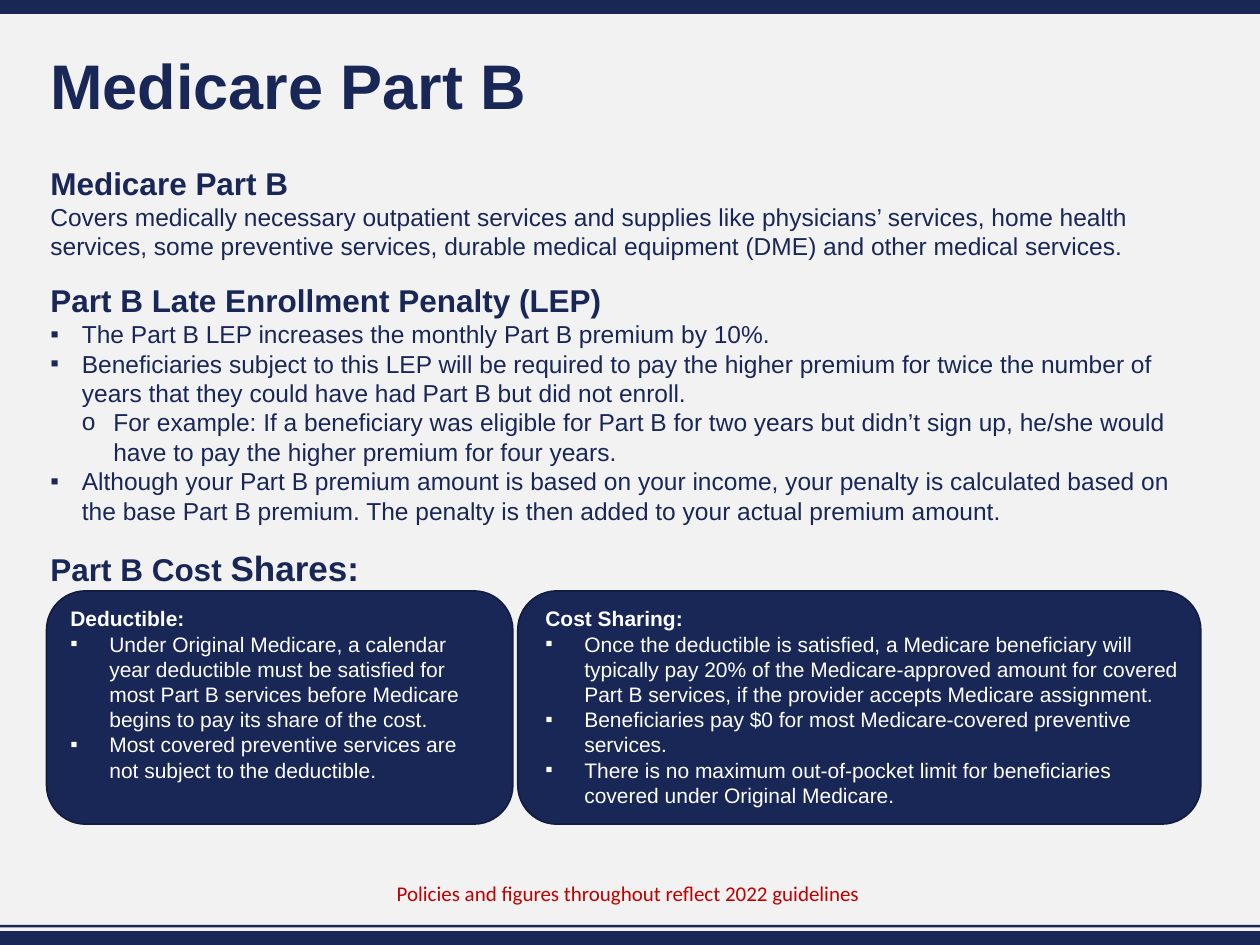
from dataclasses import dataclass
from typing import Optional

import pptx
import pptx.dml.color
import pptx.enum.shapes
import pptx.enum.text
import pptx.oxml.ns
import pptx.util
from lxml import etree

Inches = pptx.util.Inches
Pt = pptx.util.Pt
Shapes = pptx.enum.shapes.MSO_SHAPE
Anchor = pptx.enum.text.MSO_ANCHOR
AutoSize = pptx.enum.text.MSO_AUTO_SIZE


@dataclass(frozen=True)
class Theme:
    background: str = "F2F2F2"
    navy: str = "192757"
    card: str = "192756"
    card_line: str = "121D40"
    white: str = "FFFFFF"
    red: str = "C00000"
    font: str = "Arial"
    note_font: str = "Calibri"
    title: float = 36
    shares: float = 20
    heading: float = 18
    body: float = 14
    small: float = 12


THEME = Theme()


@dataclass(frozen=True)
class Box:
    left: float
    top: float
    width: float
    height: float

    def lengths(self) -> list:
        return [Inches(n) for n in (self.left, self.top, self.width, self.height)]


@dataclass(frozen=True)
class Run:
    text: str
    size: float
    bold: bool = False


@dataclass(frozen=True)
class Line:
    runs: tuple
    bullet: Optional[str] = None
    level: int = 0
    after: float = 0
    spacing: Optional[float] = None


@dataclass(frozen=True)
class Card:
    box: Box
    text_box: Box
    heading: str
    points: tuple


def color(value: str) -> pptx.dml.color.RGBColor:
    return pptx.dml.color.RGBColor.from_string(value)


def set_values(target: object, values: dict) -> None:
    for name, value in values.items():
        setattr(target, name, value)


def add_block(slide, kind, box: Box, fill: str, outline: Optional[str] = None) -> None:
    shape = slide.shapes.add_shape(kind, *box.lengths())
    shape.shadow.inherit = False
    shape.fill.solid()
    shape.fill.fore_color.rgb = color(fill)
    if outline:
        shape.line.color.rgb = color(outline)
        shape.line.width = Pt(1)
    else:
        shape.line.fill.background()


def add_bullet(paragraph, mark: str, step: float, level: int) -> None:
    properties = paragraph._p.get_or_add_pPr()
    properties.set("marL", str(Inches(step * (level + 1))))
    properties.set("indent", str(Inches(-step)))
    for tag, key, value in (("a:buFont", "typeface", THEME.font), ("a:buChar", "char", mark)):
        etree.SubElement(properties, pptx.oxml.ns.qn(tag)).set(key, value)


def add_text(slide, box: Box, lines: list, ink: str, font: str = THEME.font,
             step: float = 0.25, frame_format: Optional[dict] = None) -> None:
    frame = slide.shapes.add_textbox(*box.lengths()).text_frame
    set_values(frame, {"word_wrap": True, "auto_size": AutoSize.SHAPE_TO_FIT_TEXT,
                       **(frame_format or {})})
    for index, line in enumerate(lines):
        paragraph = frame.add_paragraph() if index else frame.paragraphs[0]
        if line.bullet:
            add_bullet(paragraph, line.bullet, step, line.level)
        set_values(paragraph, {"level": line.level, "space_after": Pt(line.after),
                               "line_spacing": line.spacing})
        for part in line.runs:
            run = paragraph.add_run()
            run.text = part.text
            set_values(run.font, {"name": font, "size": Pt(part.size), "bold": part.bold})
            run.font.color.rgb = color(ink)


def heading(text: str) -> Line:
    return Line((Run(text, THEME.heading, True),))


def body(text: str, bullet: Optional[str] = None, level: int = 0, after: float = 0) -> Line:
    return Line((Run(text, THEME.body),), bullet, level, after)


def add_card(slide, card: Card) -> None:
    add_block(slide, Shapes.ROUNDED_RECTANGLE, card.box, THEME.card, THEME.card_line)
    lines = [Line((Run(card.heading, THEME.small, True),))]
    lines += [Line((Run(point, THEME.small),), "▪") for point in card.points]
    add_text(slide, card.text_box, lines, THEME.white, step=0.31)


BARS = (Box(0, 0, 10, 0.11), Box(0, 7.39, 10, 0.11), Box(0, 7.34, 10, 0.02))
NO_MARGINS = {f"margin_{side}": 0 for side in ("left", "top", "right", "bottom")}

BODY = [
    heading("Medicare Part B"),
    body("Covers medically necessary outpatient services and supplies like physicians’ services, "
         "home health services, some preventive services, durable medical equipment (DME) "
         "and other medical services.", after=12),
    heading("Part B Late Enrollment Penalty (LEP)"),
    body("The Part B LEP increases the monthly Part B premium by 10%.", "▪"),
    body("Beneficiaries subject to this LEP will be required to pay the higher premium for twice "
         "the number of years that they could have had Part B but did not enroll.", "▪"),
    body("For example: If a beneficiary was eligible for Part B for two years but didn’t sign up, "
         "he/she would have to pay the higher premium for four years.", "o", level=1),
    body("Although your Part B premium amount is based on your income, your penalty is calculated "
         "based on the base Part B premium. The penalty is then added to your actual premium "
         "amount.", "▪", after=12),
    Line((Run("Part B Cost ", THEME.heading, True), Run("Shares:", THEME.shares, True)), after=6),
]

CARDS = (
    Card(Box(0.37, 4.69, 3.7, 1.85), Box(0.46, 4.76, 3.51, 1.51), "Deductible:", (
        "Under Original Medicare, a calendar year deductible must be satisfied for most Part B "
        "services before Medicare begins to pay its share of the cost.",
        "Most covered preventive services are not subject to the deductible.")),
    Card(Box(4.11, 4.69, 5.42, 1.85), Box(4.23, 4.76, 5.24, 1.72), "Cost Sharing:", (
        "Once the deductible is satisfied, a Medicare beneficiary will typically pay 20% of the "
        "Medicare-approved amount for covered Part B services, if the provider accepts Medicare "
        "assignment.",
        "Beneficiaries pay $0 for most Medicare-covered preventive services.",
        "There is no maximum out-of-pocket limit for beneficiaries covered under Original "
        "Medicare.")),
)


def main() -> None:
    presentation = pptx.Presentation()
    set_values(presentation, {"slide_width": Inches(10), "slide_height": Inches(7.5)})
    slide = presentation.slides.add_slide(presentation.slide_layouts[6])
    slide.background.fill.solid()
    slide.background.fill.fore_color.rgb = color(THEME.background)

    for bar in BARS:
        add_block(slide, Shapes.RECTANGLE, bar, THEME.navy)
    note = Line((Run("Policies and figures throughout reflect 2022 guidelines", THEME.small),))
    add_text(slide, Box(3.05, 6.94, 3.9, 0.3), [note], THEME.red, THEME.note_font,
             frame_format={"word_wrap": False})
    title = Line((Run("Medicare Part B", THEME.title, True),), spacing=0.9)
    add_text(slide, Box(0.4, 0.4, 9.37, 0.62), [title], THEME.navy,
             frame_format={**NO_MARGINS, "auto_size": AutoSize.NONE,
                           "vertical_anchor": Anchor.MIDDLE})
    add_text(slide, Box(0.4, 1.3, 9.2, 3.4), BODY, THEME.navy, frame_format=NO_MARGINS)
    for card in CARDS:
        add_card(slide, card)

    presentation.save("out.pptx")


if __name__ == "__main__":
    main()
